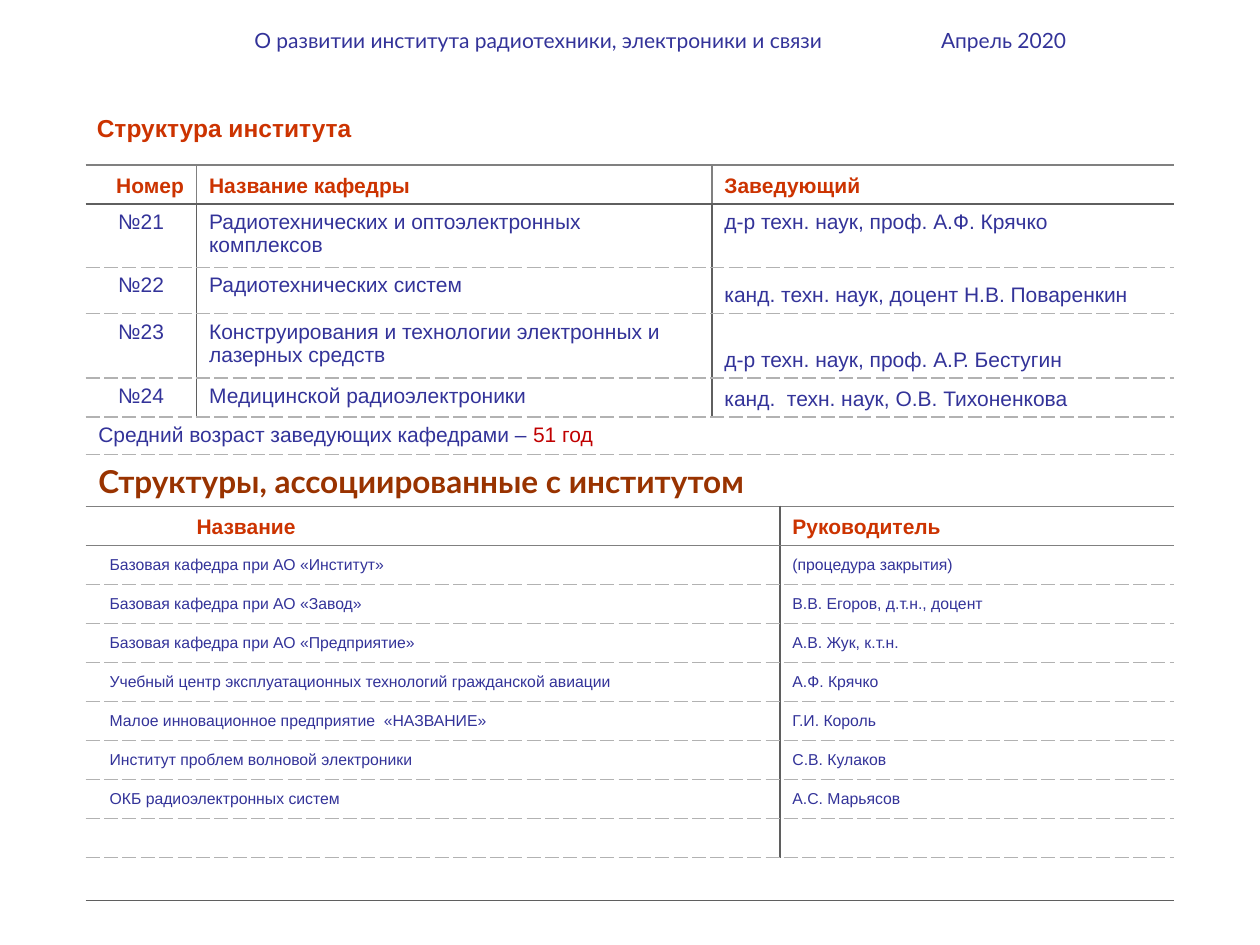
from lxml import etree
from pptx import Presentation
from pptx.dml.color import RGBColor
from pptx.enum.text import MSO_ANCHOR, PP_ALIGN
from pptx.oxml.ns import qn
from pptx.util import Inches, Pt

TOP, MIDDLE, BOTTOM = MSO_ANCHOR.TOP, MSO_ANCHOR.MIDDLE, MSO_ANCHOR.BOTTOM
LEFT, CENTER, RIGHT = PP_ALIGN.LEFT, PP_ALIGN.CENTER, PP_ALIGN.RIGHT

BLUE, ORANGE, BROWN, RED = "333399", "CC3300", "993300", "C00000"

# Border styles: colour, width in points, dash
DASHED = ("B2B2B2", 0.75, "dash")
GRAY = ("808080", 1, "solid")
DARK = ("5F5F5F", 1, "solid")

COL_WIDTHS = [0.88, 4.09, 0.54, 3.13]
ROW_HEIGHTS = [0.31, 0.5, 0.37, 0.51, 0.31, 0.3, 0.41] + [0.31] * 9 + [0.34]
AGE_ROW, SUBTITLE_ROW, PARTNER_HEAD, LAST_ROW = 5, 6, 7, 16

DEPARTMENTS = [
    ("№21", "Радиотехнических и оптоэлектронных комплексов",
     "д-р техн. наук, проф. А.Ф. Крячко", TOP),
    ("№22", "Радиотехнических систем",
     "канд. техн. наук, доцент Н.В. Поваренкин", BOTTOM),
    ("№23", "Конструирования и технологии электронных и лазерных средств",
     "д-р техн. наук, проф. А.Р. Бестугин", BOTTOM),
    ("№24", "Медицинской радиоэлектроники",
     "канд.  техн. наук, О.В. Тихоненкова", BOTTOM),
]
PARTNERS = [
    ("Базовая кафедра при АО «Институт»", "(процедура закрытия)"),
    ("Базовая кафедра при АО «Завод»", "В.В. Егоров, д.т.н., доцент"),
    ("Базовая кафедра при АО «Предприятие»", "А.В. Жук, к.т.н."),
    ("Учебный центр эксплуатационных технологий гражданской авиации", "А.Ф. Крячко"),
    ("Малое инновационное предприятие  «НАЗВАНИЕ»", "Г.И. Король"),
    ("Институт проблем волновой электроники", "С.В. Кулаков"),
    ("ОКБ радиоэлектронных систем", "А.С. Марьясов"),
]


def rgb(value):
    return RGBColor.from_string(value)


def style(p, size, color, bold=False, font="Arial"):
    p.font.size = Pt(size)
    p.font.name = font
    p.font.bold = bold
    p.font.color.rgb = rgb(color)


def add_line_text(s, box, text):
    """Add a one-line text box and return its paragraph."""
    tf = s.shapes.add_textbox(*map(Inches, box)).text_frame
    tf.word_wrap = True
    tf.margin_top = tf.margin_bottom = 0
    p = tf.paragraphs[0]
    p.add_run().text = text
    return p


def add_header(s, box):
    p = add_line_text(s, box, "О развитии института радиотехники, "
                              "электроники и связи\tАпрель 2020")
    tabs = etree.SubElement(p._p.get_or_add_pPr(), qn("a:tabLst"))
    etree.SubElement(tabs, qn("a:tab"), pos=str(Inches(5.45)), algn="l")
    style(p, 12, BLUE, font="Lato")


def add_title(s, box):
    style(add_line_text(s, box, "Структура института"), 14, ORANGE, bold=True)


def set_border(cell, side, border):
    ln = etree.SubElement(cell._tc.get_or_add_tcPr(), qn(f"a:ln{side}"))
    if border is None:
        etree.SubElement(ln, qn("a:noFill"))
        return
    color, width, dash = border
    ln.set("w", str(Pt(width)))
    fill = etree.SubElement(ln, qn("a:solidFill"))
    etree.SubElement(fill, qn("a:srgbClr"), val=color)
    etree.SubElement(ln, qn("a:prstDash"), val=dash)


def horizontal_border(edge):
    """Border on the edge above row number `edge`."""
    if edge in (0, PARTNER_HEAD, PARTNER_HEAD + 1):
        return GRAY
    return DARK if edge in (1, LAST_ROW + 1) else DASHED


def vertical_border(row, edge):
    """Border on the edge left of column number `edge`."""
    if row < AGE_ROW and edge in (1, 2):
        return DARK if row else GRAY
    if PARTNER_HEAD <= row < LAST_ROW and edge == 3:
        return DARK
    return None


def fill_cell(cell, text, size=12, color=BLUE, bold=False, anchor=TOP,
              align=LEFT, indent=0, font="Arial"):
    cell.vertical_anchor = anchor
    p = cell.text_frame.paragraphs[0]
    p.add_run().text = text
    p.alignment = align
    if indent:
        p._p.get_or_add_pPr().set("marL", str(Inches(indent)))
    style(p, size, color, bold, font)
    return p


def add_structure_table(s, left, top):
    table = s.shapes.add_table(
        len(ROW_HEIGHTS), len(COL_WIDTHS), Inches(left), Inches(top),
        Inches(sum(COL_WIDTHS)), Inches(sum(ROW_HEIGHTS))).table
    table.first_row = table.horz_banding = False
    for column, width in zip(table.columns, COL_WIDTHS):
        column.width = Inches(width)

    # Grid: heights, borders and merged cells
    for r, height in enumerate(ROW_HEIGHTS):
        table.rows[r].height = Inches(height)
        for c in range(len(COL_WIDTHS)):
            cell = table.cell(r, c)
            set_border(cell, "L", vertical_border(r, c))
            set_border(cell, "R", vertical_border(r, c + 1))
            set_border(cell, "T", horizontal_border(r))
            set_border(cell, "B", horizontal_border(r + 1))
            cell.fill.background()
            style(cell.text_frame.paragraphs[0], 9, BLUE)
        if r in (AGE_ROW, SUBTITLE_ROW, LAST_ROW):
            first, last = 0, 3
        else:
            first, last = (2, 3) if r < AGE_ROW else (0, 2)
        table.cell(r, first).merge(table.cell(r, last))

    # Departments
    head = dict(color=ORANGE, bold=True, anchor=BOTTOM)
    fill_cell(table.cell(0, 0), "Номер", align=RIGHT, **head)
    fill_cell(table.cell(0, 1), "Название кафедры", **head)
    fill_cell(table.cell(0, 2), "Заведующий", **head)
    for r, (number, name, chief, anchor) in enumerate(DEPARTMENTS, 1):
        fill_cell(table.cell(r, 0), number, align=CENTER)
        fill_cell(table.cell(r, 1), name)
        fill_cell(table.cell(r, 2), chief, anchor=anchor)

    # Average age and subtitle
    p = fill_cell(table.cell(AGE_ROW, 0), "Средний возраст заведующих кафедрами – ")
    age = p.add_run()
    age.text = "51 год"
    age.font.color.rgb = rgb(RED)
    fill_cell(table.cell(SUBTITLE_ROW, 0), "Структуры, ассоциированные с институтом",
              size=18, color=BROWN, bold=True, anchor=BOTTOM, font="Lato")

    # Associated structures
    fill_cell(table.cell(PARTNER_HEAD, 0), "Название", indent=0.78, **head)
    fill_cell(table.cell(PARTNER_HEAD, 3), "Руководитель", **head)
    for r, (name, chief) in enumerate(PARTNERS, PARTNER_HEAD + 1):
        fill_cell(table.cell(r, 0), name, size=9, anchor=MIDDLE, indent=0.09)
        fill_cell(table.cell(r, 3), chief, size=9, anchor=MIDDLE)


def main():
    prs = Presentation()
    prs.slide_width, prs.slide_height = Inches(10), Inches(7.5)
    s = prs.slides.add_slide(prs.slide_layouts[6])
    add_title(s, (0.67, 0.9, 9.33, 0.24))
    add_header(s, (1.92, 0.22, 8.08, 0.2))
    add_structure_table(s, 0.68, 1.31)
    prs.save("out.pptx")


if __name__ == "__main__":
    main()
